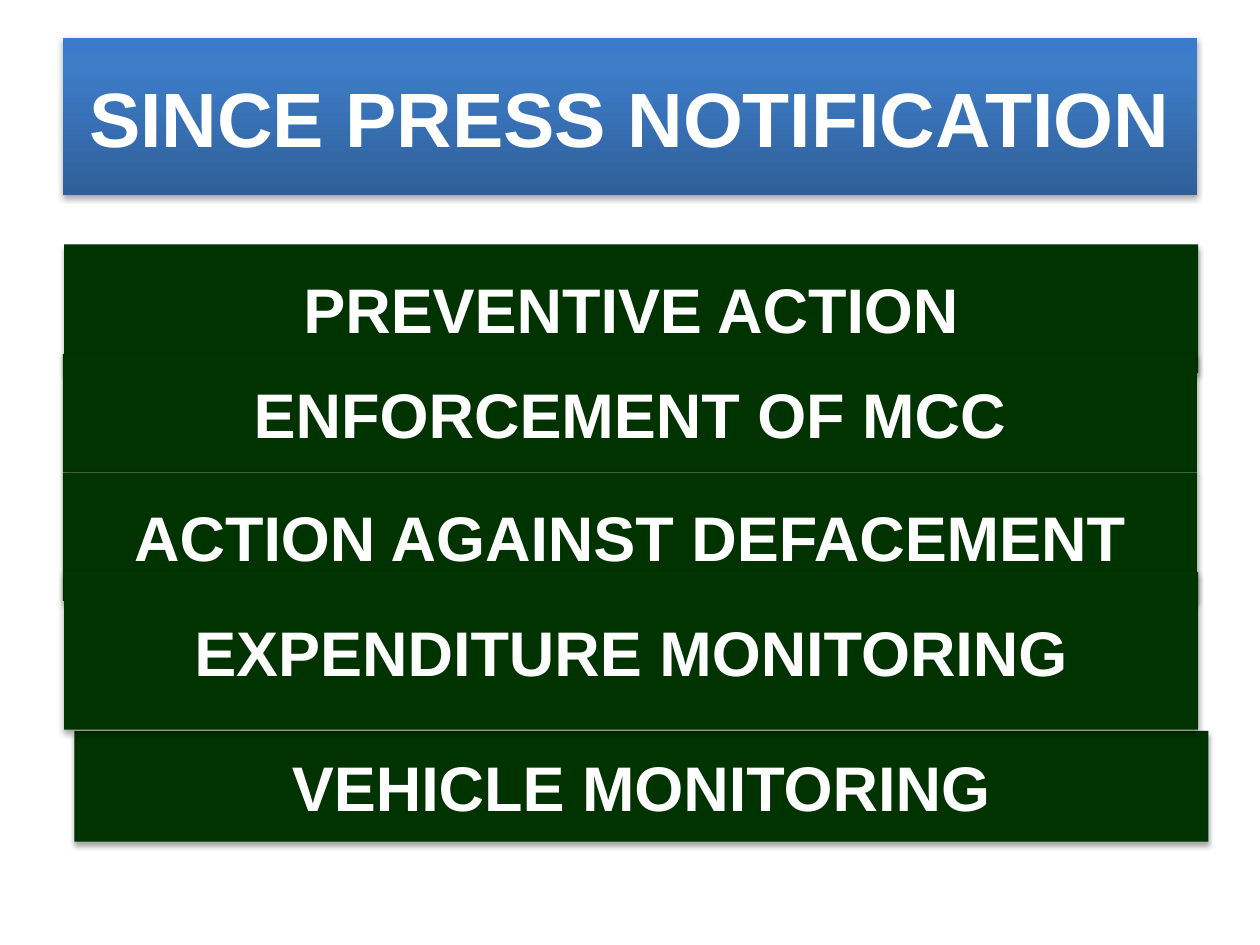
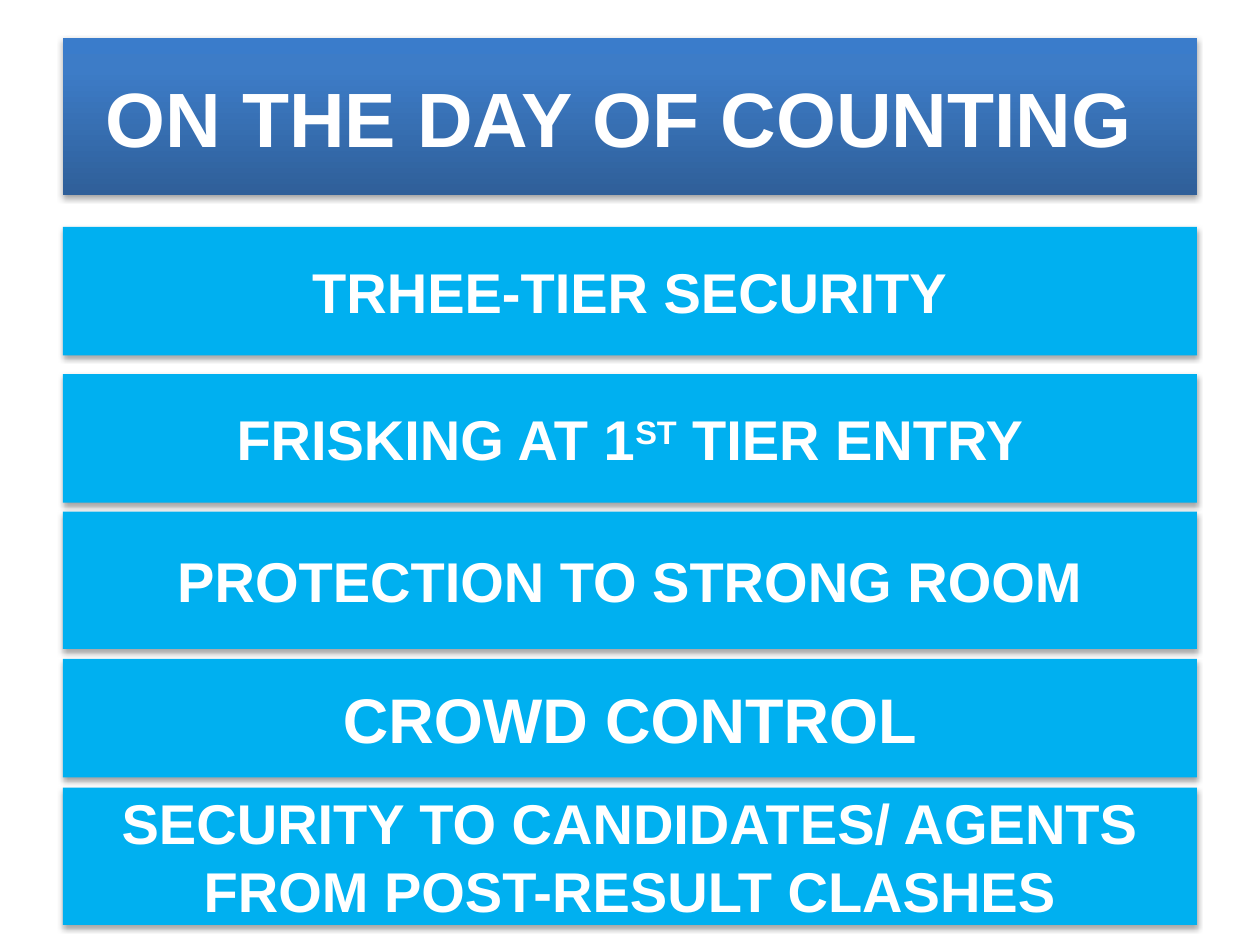
from lxml import etree
from pptx import Presentation
from pptx.dml.color import RGBColor
from pptx.enum.shapes import MSO_SHAPE
from pptx.enum.text import MSO_ANCHOR, MSO_AUTO_SIZE, PP_ALIGN
from pptx.oxml.ns import qn
from pptx.util import Inches, Pt

RECTANGLE = MSO_SHAPE.RECTANGLE
MIDDLE = MSO_ANCHOR.MIDDLE
NO_AUTOFIT = MSO_AUTO_SIZE.NONE
CENTER = PP_ALIGN.CENTER

WHITE = RGBColor(0xFF, 0xFF, 0xFF)
BLACK = RGBColor(0x00, 0x00, 0x00)
DARK_GREEN = RGBColor(0x00, 0x33, 0x00)
SKY_BLUE = RGBColor(0x00, 0xB0, 0xF0)
TITLE_GRADIENT = [
    (0, RGBColor(0x2F, 0x5F, 0x99)),
    (80, RGBColor(0x3D, 0x7C, 0xC7)),
    (100, RGBColor(0x3A, 0x7C, 0xCB)),
]

FONT = "Arial"
TITLE_ONLY = 5
TITLE_SIZE = 44
LEFT, WIDTH = 0.5, 9
TITLE_BOX = (LEFT, 0.3, WIDTH, 1.25)
RAISED_MARK = "^"

NOTIFICATION_BARS = [
    ("PREVENTIVE ACTION", 0.51, 1.94, 1.02, 36),
    ("ENFORCEMENT OF MCC", LEFT, 2.81, 0.94, 36),
    ("ACTION AGAINST DEFACEMENT", LEFT, 3.75, 1.02, 36),
    ("VEHICLE MONITORING", 0.59, 5.8, 0.88, 36),
    ("EXPENDITURE MONITORING", 0.51, 4.54, 1.25, 36),
]
COUNTING_BARS = [
    ("TRHEE-TIER SECURITY", LEFT, 1.8, 1.02, 32),
    ("FRISKING AT 1^ST^ TIER ENTRY", LEFT, 2.97, 1.02, 32),
    ("PROTECTION TO STRONG ROOM", LEFT, 4.06, 1.09, 32),
    ("CROWD CONTROL", LEFT, 5.23, 0.94, 36),
    ("SECURITY TO CANDIDATES/ AGENTS FROM POST-RESULT CLASHES",
     LEFT, 6.25, 1.09, 32),
]


def add_element(parent, tag, **attributes):
    """Append a DrawingML element with the given attributes."""
    values = {name: str(value) for name, value in attributes.items()}
    return etree.SubElement(parent, qn(f"a:{tag}"), values)


def add_shadow(shape):
    """Give a shape the soft shadow that falls straight down."""
    effects = add_element(shape._element.spPr, "effectLst")
    shadow = add_element(effects, "outerShdw", blurRad=Pt(3.1), dist=Pt(1.8),
                         dir=90 * 60000, rotWithShape=0)
    color = add_element(shadow, "srgbClr", val=BLACK)
    add_element(color, "alpha", val=35000)


def fill_gradient(shape, stops):
    """Fill a shape with colour stops that run from bottom to top."""
    gradient = add_element(shape._element.spPr, "gradFill", rotWithShape=1)
    stop_list = add_element(gradient, "gsLst")
    for percent, color in stops:
        stop = add_element(stop_list, "gs", pos=percent * 1000)
        add_element(stop, "srgbClr", val=color)
    add_element(gradient, "lin", ang=270 * 60000, scaled=0)


def write_label(shape, text, size):
    """Write centred bold white text, raising the parts between marks."""
    frame = shape.text_frame
    frame.word_wrap = True
    frame.auto_size = NO_AUTOFIT
    frame.vertical_anchor = MIDDLE
    para = frame.paragraphs[0]
    para.alignment = CENTER
    for index, part in enumerate(text.split(RAISED_MARK)):
        span = para.add_run()
        span.text = part
        span.font.name = FONT
        span.font.size = Pt(size)
        span.font.bold = True
        span.font.color.rgb = WHITE
        if index % 2:
            span._r.get_or_add_rPr().set("baseline", "30000")


def add_title(page, text, box):
    """Turn the title placeholder into the gradient heading band."""
    title = page.shapes.title
    title.left, title.top, title.width, title.height = map(Inches, box)
    fill_gradient(title, TITLE_GRADIENT)
    add_shadow(title)
    write_label(title, text, TITLE_SIZE)


def add_bar(page, text, box, size, color):
    """Add one solid labelled bar."""
    bar = page.shapes.add_shape(RECTANGLE, *map(Inches, box))
    bar.fill.solid()
    bar.fill.fore_color.rgb = color
    bar.line.fill.background()
    add_shadow(bar)
    write_label(bar, text, size)


def add_bar_page(deck, title, bars, color):
    """Add a slide with a heading band and a stack of bars."""
    page = deck.slides.add_slide(deck.slide_layouts[TITLE_ONLY])
    add_title(page, title, TITLE_BOX)
    for text, left, top, height, size in bars:
        add_bar(page, text, (left, top, WIDTH, height), size, color)


def main():
    """Build and save the deck."""
    deck = Presentation()
    deck.slide_width, deck.slide_height = Inches(10), Inches(7.5)
    add_bar_page(deck, "SINCE PRESS NOTIFICATION", NOTIFICATION_BARS, DARK_GREEN)
    add_bar_page(deck, "ON THE DAY OF COUNTING ", COUNTING_BARS, SKY_BLUE)
    deck.save("out.pptx")


if __name__ == "__main__":
    main()
